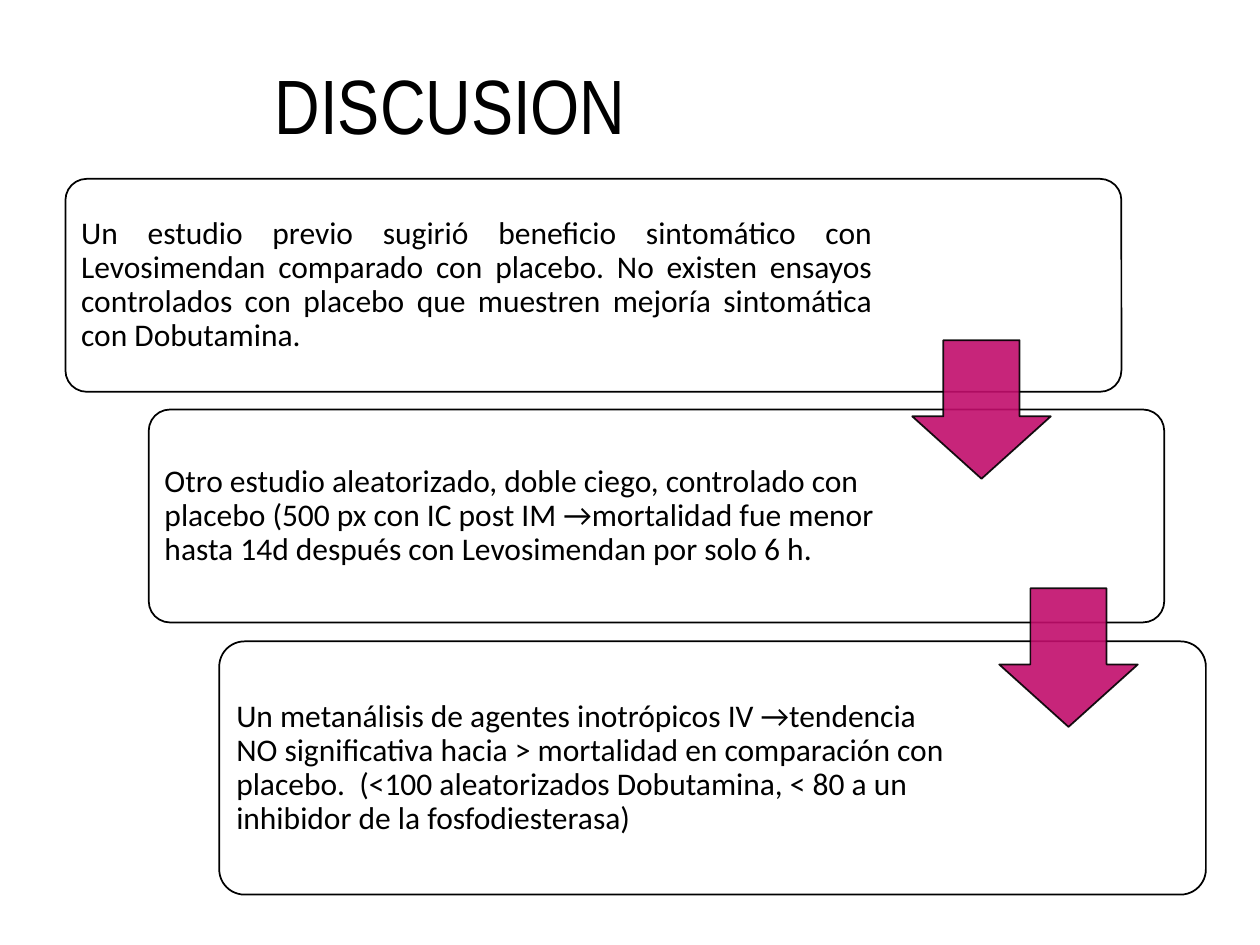
from lxml.etree import SubElement
from pptx import Presentation
from pptx.dml.color import RGBColor
from pptx.enum.shapes import MSO_SHAPE
from pptx.enum.text import MSO_ANCHOR, PP_ALIGN
from pptx.oxml.ns import qn
from pptx.util import Pt

BLACK = RGBColor(0, 0, 0)
WHITE = RGBColor(255, 255, 255)
PINK = RGBColor(0xC2, 0x0E, 0x6C)

# left, top, width, height of the card; inset and width of its text
CARDS = [
    ((37.4, 102.2, 603.4, 121.7), 3.6, 463, PP_ALIGN.JUSTIFY,
     "Un estudio previo sugirió beneficio sintomático con Levosimendan "
     "comparado con placebo. No existen ensayos controlados con placebo que "
     "muestren mejoría sintomática con Dobutamina."),
    ((85, 234, 580.3, 121.7), 3.6, 440, PP_ALIGN.LEFT,
     "Otro estudio aleatorizado, doble ciego, controlado con placebo (500 px "
     "con IC post IM →mortalidad fue menor hasta 14d después con "
     "Levosimendan por solo 6 h."),
    ((125.3, 366.5, 563.8, 144.7), 4.3, 425.5, PP_ALIGN.LEFT,
     "Un metanálisis de agentes inotrópicos IV →tendencia NO significativa "
     "hacia > mortalidad en comparación con placebo.  (<100 aleatorizados "
     "Dobutamina, < 80 a un inhibidor de la fosfodiesterasa)"),
]
ARROWS = [(521.3, 194.4), (571, 336.2)]
ARROW_SIZE = 79.2


def write(frame, text, font, size, align):
    frame.word_wrap = True
    frame.vertical_anchor = MSO_ANCHOR.MIDDLE
    para = frame.paragraphs[0]
    para.alignment = align
    para.line_spacing = 0.9
    run = para.add_run()
    run.text = text
    run.font.name = font
    run.font.size = Pt(size)
    run.font.color.rgb = BLACK


def add_title(slide):
    title = slide.shapes.title
    title.left, title.top = Pt(29.5), Pt(33.1)
    title.width, title.height = Pt(465.8), Pt(59)
    write(title.text_frame, "DISCUSION ", "Arial Narrow", 44, PP_ALIGN.CENTER)


def add_shape(slide, kind, box, fill, adjust):
    shape = slide.shapes.add_shape(kind, *map(Pt, box))
    shape.shadow.inherit = False
    for i, value in enumerate(adjust):
        shape.adjustments[i] = value
    shape.fill.solid()
    shape.fill.fore_color.rgb = fill
    shape.line.color.rgb = BLACK
    shape.line.width = Pt(1)
    return shape


def add_card(slide, box, inset, wide, align, text):
    add_shape(slide, MSO_SHAPE.ROUNDED_RECTANGLE, box, WHITE, [0.1])
    left, top, _, high = box
    label = slide.shapes.add_textbox(
        Pt(left + inset), Pt(top + inset), Pt(wide), Pt(high - 2 * inset))
    frame = label.text_frame
    frame.margin_left = frame.margin_right = Pt(5.4)
    frame.margin_top = frame.margin_bottom = Pt(5.4)
    write(frame, text, "Calibri", 18, align)


def add_arrow(slide, left, top):
    """Add a down arrow whose fill and outline are 90% opaque."""
    arrow = add_shape(slide, MSO_SHAPE.DOWN_ARROW,
                      (left, top, ARROW_SIZE, ARROW_SIZE), PINK, [0.55, 0.45])
    for color in arrow._element.spPr.iter(qn("a:srgbClr")):
        SubElement(color, qn("a:alpha")).set("val", "90000")


def main():
    deck = Presentation()
    deck.slide_width, deck.slide_height = Pt(720), Pt(540)
    slide = deck.slides.add_slide(deck.slide_layouts[5])
    add_title(slide)
    for card in CARDS:
        add_card(slide, *card)
    for place in ARROWS:
        add_arrow(slide, *place)
    deck.save("out.pptx")


if __name__ == "__main__":
    main()
